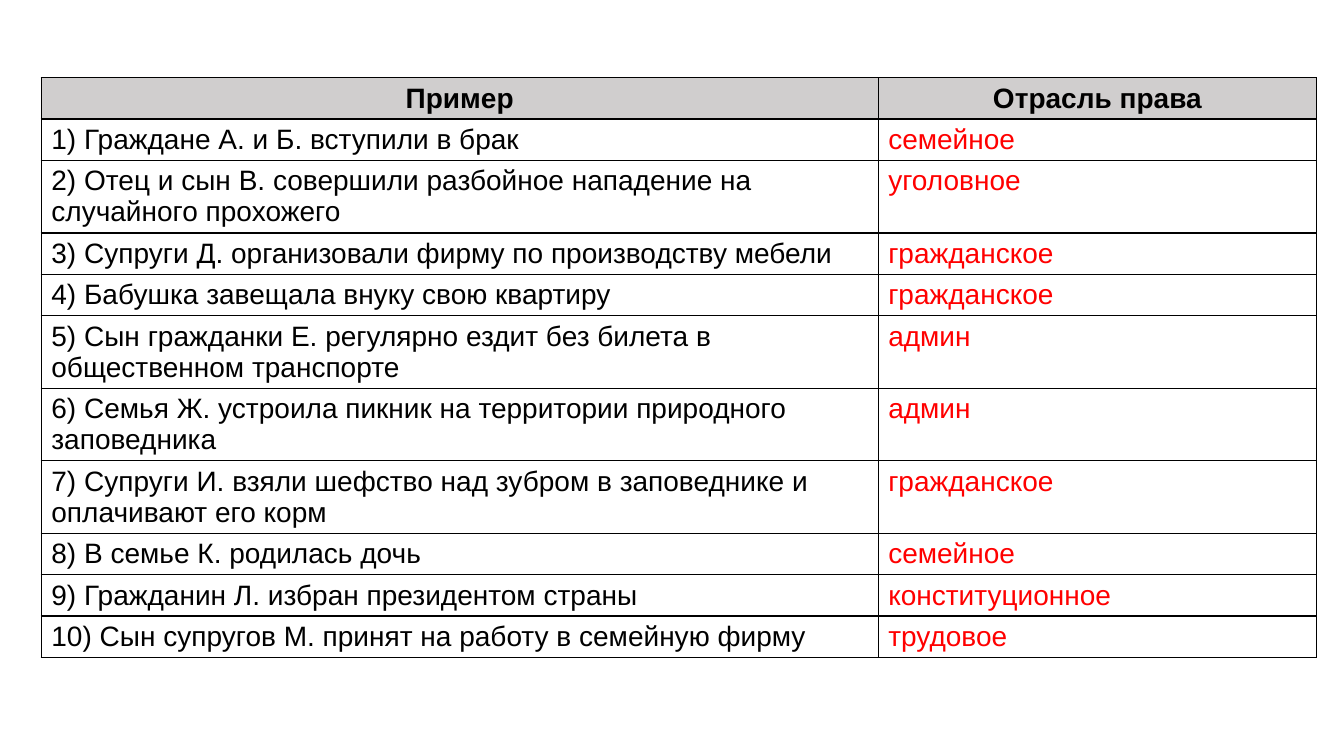
import pptx
import pptx.util
from lxml import etree
from pptx.dml.color import RGBColor
from pptx.enum.text import PP_ALIGN
from pptx.oxml.ns import qn
from pptx.util import Inches

HEADERS = ("Пример", "Отрасль права")
EXAMPLES = [
    ("1) Граждане А. и Б. вступили в брак", "семейное"),
    ("2) Отец и сын В. совершили разбойное нападение на случайного прохожего", "уголовное"),
    ("3) Супруги Д. организовали фирму по производству мебели", "гражданское"),
    ("4) Бабушка завещала внуку свою квартиру", "гражданское"),
    ("5) Сын гражданки Е. регулярно ездит без билета в общественном транспорте", "админ"),
    ("6) Семья Ж. устроила пикник на территории природного заповедника", "админ"),
    ("7) Супруги И. взяли шефство над зубром в заповеднике и оплачивают его корм", "гражданское"),
    ("8) В семье К. родилась дочь", "семейное"),
    ("9) Гражданин Л. избран президентом страны", "конституционное"),
    ("10) Сын супругов М. принят на работу в семейную фирму", "трудовое"),
]

BLACK = RGBColor(0x00, 0x00, 0x00)
RED = RGBColor(0xFF, 0x00, 0x00)
GRAY = RGBColor(0xD0, 0xCE, 0xCE)

LEFT, TOP = Inches(0.41), Inches(0.77)
COLUMN_WIDTHS = (Inches(8.3), Inches(4.35))
ROW_HEIGHT = Inches(0.41)
BORDER_WIDTH = pptx.util.Pt(1)

BODY_FONT = {"name": "Arial", "size": pptx.util.Pt(20), "bold": False}
HEADER_FORMAT = {"font": {**BODY_FONT, "bold": True}, "color": BLACK, "alignment": PP_ALIGN.CENTER}
EXAMPLE_FORMAT = {"font": BODY_FONT, "color": BLACK, "alignment": PP_ALIGN.LEFT}
ANSWER_FORMAT = {**EXAMPLE_FORMAT, "color": RED}


def write_text(cell, text, text_format):
    paragraph = cell.text_frame.paragraphs[0]
    paragraph.alignment = text_format["alignment"]
    run = paragraph.add_run()
    run.text = text
    for name, value in text_format["font"].items():
        setattr(run.font, name, value)
    run.font.color.rgb = text_format["color"]


def add_borders(cell):
    """Put the four border lines before the fill, as the schema requires."""
    properties = cell._tc.get_or_add_tcPr()
    for position, side in enumerate(("a:lnL", "a:lnR", "a:lnT", "a:lnB")):
        line = etree.Element(qn(side), w=str(BORDER_WIDTH))
        fill = etree.SubElement(line, qn("a:solidFill"))
        etree.SubElement(fill, qn("a:srgbClr"), val=str(BLACK))
        properties.insert(position, line)


def main():
    presentation = pptx.Presentation()
    presentation.slide_width = Inches(13.33)
    presentation.slide_height = Inches(7.5)
    slide = presentation.slides.add_slide(presentation.slide_layouts[6])

    rows = [HEADERS, *EXAMPLES]
    table = slide.shapes.add_table(
        len(rows), len(HEADERS), LEFT, TOP, sum(COLUMN_WIDTHS), ROW_HEIGHT * len(rows)
    ).table
    table.horz_banding = False
    for column, width in zip(table.columns, COLUMN_WIDTHS):
        column.width = width

    for row_index, texts in enumerate(rows):
        is_header = row_index == 0
        table.rows[row_index].height = ROW_HEIGHT
        formats = (HEADER_FORMAT,) * 2 if is_header else (EXAMPLE_FORMAT, ANSWER_FORMAT)
        for column_index, (text, text_format) in enumerate(zip(texts, formats)):
            cell = table.cell(row_index, column_index)
            if is_header:
                cell.fill.solid()
                cell.fill.fore_color.rgb = GRAY
            else:
                cell.fill.background()
            write_text(cell, text, text_format)
            add_borders(cell)

    presentation.save("out.pptx")


if __name__ == "__main__":
    main()
